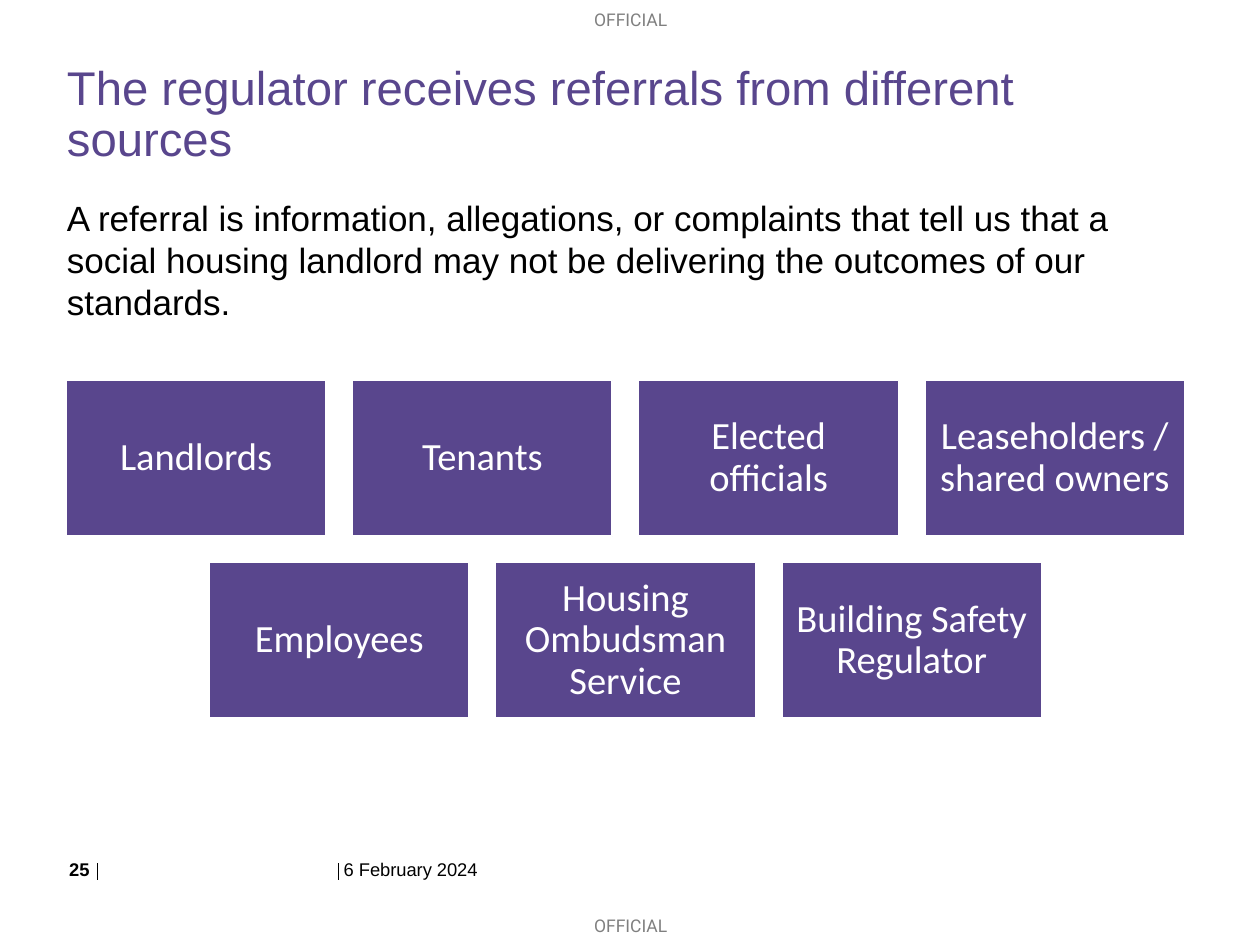
from lxml import etree
from pptx import Presentation
from pptx import util as u
from pptx.dml.color import RGBColor
from pptx.enum import shapes, text
from pptx.oxml.ns import qn

PURPLE, BLACK, WHITE = "59468D", "000000", "FFFFFF"

# Content
title = "The regulator receives referrals from different sources"
definition = ("A referral is information, allegations, or complaints that tell us that a "
              "social housing landlord may not be delivering the outcomes of our standards.")
source_rows = [
    ["Landlords", "Tenants", "Elected officials", "Leaseholders / shared owners"],
    ["Employees", "Housing Ombudsman Service", "Building Safety Regulator"],
]
marking = "OFFICIAL"
page_number = "25"
date = "6 February 2024"

# Layout in centimetres
LEFT, WIDTH = 1.35, 22.53
BOX_W, BOX_H, GAP = 5.24, 3.14, 0.53
ROWS_TOP, ROWS_CENTRE = 7.67, 12.61
FOOTER_TOP = 17.3
MARKING_TOPS = (0.18, 18.44)
DIVIDER_XS = (1.96, 6.83)
DIVIDER_TOP, DIVIDER_BOTTOM = 17.4, 17.73

deck = Presentation()
deck.slide_width, deck.slide_height = u.Cm(25.4), u.Cm(19.05)
slide = deck.slides.add_slide(deck.slide_layouts[6])


def colour(value):
    return RGBColor.from_string(value)


def write(holder, words, size, ink, font="Arial", bold=False, inset=0.0,
          align=text.PP_ALIGN.LEFT, anchor=text.MSO_ANCHOR.TOP, spacing=None, wrap=True):
    frame = holder.text_frame
    frame.text = words
    frame.word_wrap = wrap
    frame.vertical_anchor = anchor
    frame.margin_left = frame.margin_right = u.Cm(inset)
    frame.margin_top = frame.margin_bottom = u.Cm(inset)
    line = frame.paragraphs[0]
    line.alignment = align
    line.line_spacing = spacing
    run = line.runs[0]
    run.font.name, run.font.size, run.font.bold = font, u.Pt(size), bold
    run.font.color.rgb = colour(ink)
    return run


def add_text(left, top, width, height, words, size, ink, **style):
    box = slide.shapes.add_textbox(u.Cm(left), u.Cm(top), u.Cm(width), u.Cm(height))
    return write(box, words, size, ink, **style)


# Footer dividers
for x in DIVIDER_XS:
    divider = slide.shapes.add_connector(
        shapes.MSO_CONNECTOR.STRAIGHT,
        u.Cm(x), u.Cm(DIVIDER_BOTTOM), u.Cm(x), u.Cm(DIVIDER_TOP))
    divider.line.color.rgb = colour(BLACK)
    divider.line.width = u.Pt(0.75)
    etree.SubElement(divider._element.spPr, qn("a:effectLst"))

# Half-transparent markings at the top and bottom
for top in MARKING_TOPS:
    run = add_text(11.98, top, 1.52, 0.43, marking, 10, BLACK, font="Roboto", wrap=False)
    ink = run._r.find(".//" + qn("a:srgbClr"))
    etree.SubElement(ink, qn("a:alpha"), val="50000")

# Title and definition
add_text(LEFT, 1.3, WIDTH, 2.0, title, 27, PURPLE, spacing=0.9)
add_text(LEFT, 3.96, WIDTH, 3.02, definition, 20, BLACK)

# Referral sources, each row centred
for row, sources in enumerate(source_rows):
    row_width = len(sources) * (BOX_W + GAP) - GAP
    row_left = ROWS_CENTRE - row_width / 2
    for column, source in enumerate(sources):
        box = slide.shapes.add_shape(
            shapes.MSO_SHAPE.RECTANGLE,
            u.Cm(row_left + column * (BOX_W + GAP)), u.Cm(ROWS_TOP + row * (BOX_H + GAP)),
            u.Cm(BOX_W), u.Cm(BOX_H))
        box.shadow.inherit = False
        box.fill.solid()
        box.fill.fore_color.rgb = colour(PURPLE)
        box.line.color.rgb = colour(WHITE)
        box.line.width = u.Pt(1)
        write(box, source, 22, WHITE, font="Calibri", inset=0.23, spacing=0.9,
              align=text.PP_ALIGN.CENTER, anchor=text.MSO_ANCHOR.MIDDLE)

# Footer
add_text(6.93, FOOTER_TOP, 5.97, 0.3, date, 10.5, BLACK)
add_text(LEFT, FOOTER_TOP, 0.5, 0.3, page_number, 10.5, BLACK, bold=True,
         align=text.PP_ALIGN.CENTER)

deck.save("out.pptx")
